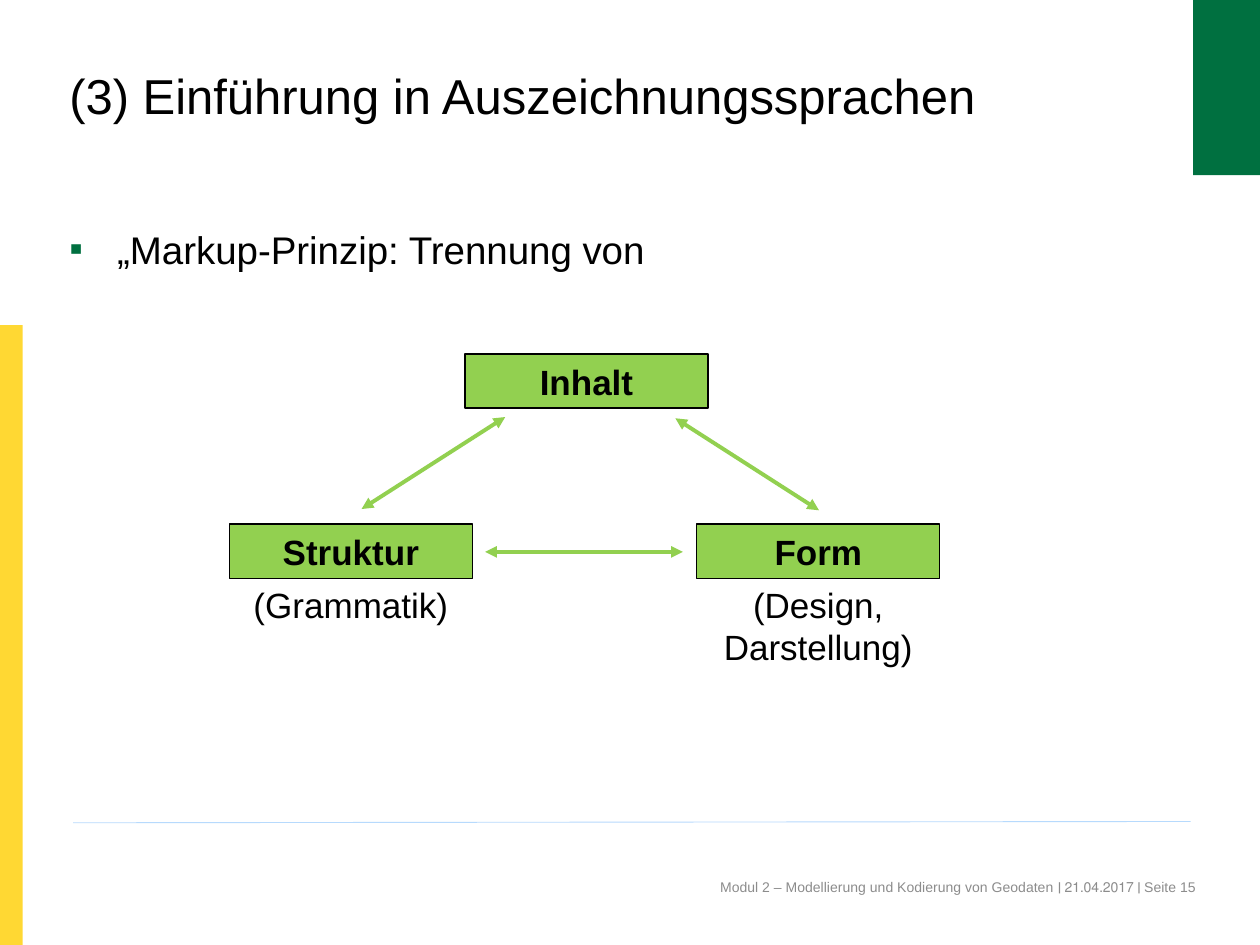
from dataclasses import dataclass

from lxml import etree
from pptx import Presentation
from pptx.dml.color import RGBColor
from pptx.enum.shapes import MSO_CONNECTOR, MSO_SHAPE
from pptx.enum.text import MSO_ANCHOR, PP_ALIGN
from pptx.oxml.ns import qn
from pptx.util import Inches, Pt

RECT = MSO_SHAPE.RECTANGLE
LINE = MSO_CONNECTOR.STRAIGHT
LEFT, MID, RIGHT = PP_ALIGN.LEFT, PP_ALIGN.CENTER, PP_ALIGN.RIGHT
TOP, CENTER = MSO_ANCHOR.TOP, MSO_ANCHOR.MIDDLE


@dataclass(frozen=True)
class Theme:
    """Colours, font and type sizes."""
    font: str = "Arial"
    ink: str = "000000"
    gray: str = "8C8C8C"
    green: str = "007040"
    lime: str = "92D050"
    gold: str = "FFD833"
    sky: str = "B7DAFD"
    title: int = 28
    body: int = 22
    node: int = 20
    foot: int = 8


THEME = Theme()
PAD = (0.08, 0.04, 0.08, 0.04)


def rgb(code):
    """Turn a hex code into a colour."""
    return RGBColor.from_string(code)


def write(shape, text, size, color=THEME.ink, bold=False, align=LEFT,
          anchor=TOP, pad=(0, 0, 0, 0), lead=None, bullet=None):
    """Put one formatted paragraph into a shape."""
    frame = shape.text_frame
    frame.word_wrap = True
    frame.vertical_anchor = anchor
    (frame.margin_left, frame.margin_top,
     frame.margin_right, frame.margin_bottom) = map(Inches, pad)
    para = frame.paragraphs[0]
    para.text = text
    para.alignment = align
    if lead:
        para.line_spacing = Pt(lead)
    if bullet:
        props = para._p.get_or_add_pPr()
        props.set("marL", str(Inches(0.38)))
        props.set("indent", str(-Inches(0.38)))
        tint = etree.SubElement(props, qn("a:buClr"))
        etree.SubElement(tint, qn("a:srgbClr"), val=bullet)
        etree.SubElement(props, qn("a:buFont"), typeface=THEME.font)
        etree.SubElement(props, qn("a:buChar"), char="▪")
    font = para.font
    font.name, font.size, font.bold = THEME.font, Pt(size), bold
    font.color.rgb = rgb(color)


def label(slide, box, text, size, **style):
    """Add a text box."""
    shape = slide.shapes.add_textbox(*map(Inches, box))
    write(shape, text, size, **style)


def block(slide, box, fill, edge=None):
    """Add a filled rectangle, outlined if an edge colour is given."""
    shape = slide.shapes.add_shape(RECT, *map(Inches, box))
    shape.shadow.inherit = False
    shape.fill.solid()
    shape.fill.fore_color.rgb = rgb(fill)
    if edge:
        shape.line.color.rgb = rgb(edge)
        shape.line.width = Pt(0.75)
    else:
        shape.line.fill.background()
    return shape


def stroke(slide, ends, color, width, heads=False):
    """Add a straight line, with arrowheads at both ends on request."""
    link = slide.shapes.add_connector(LINE, *map(Inches, ends))
    link.line.color.rgb = rgb(color)
    link.line.width = Pt(width)
    if heads:
        for tag in ("a:headEnd", "a:tailEnd"):
            etree.SubElement(link.line._ln, qn(tag), type="triangle")
    etree.SubElement(link._element.spPr, qn("a:effectLst"))


def frame(slide, box):
    """Draw the coloured edge blocks, the rule and the footer."""
    x, y, w, h = box
    block(slide, (x, y + 2.58, 0.18, h - 2.58), THEME.gold)
    block(slide, (x + w - 0.53, y, 0.53, 1.39), THEME.green)
    stroke(slide, (x + 0.58, y + 6.53, x + 9.45, y + 6.52), THEME.sky, 0.5)
    label(slide, (x + 5, y + 6.97, 4.49, 0.4),
          "Modul 2 – Modellierung und Kodierung von Geodaten "
          "׀ 21.04.2017 ׀ Seite 15",
          THEME.foot, color=THEME.gray, align=RIGHT, pad=(0, 0, 0, 0.05))


def heading(slide, box):
    """Place the slide title."""
    label(slide, box, "(3) Einführung in Auszeichnungssprachen",
          THEME.title, lead=33)


def body(slide, box):
    """Place the bullet line."""
    label(slide, box, "„Markup-Prinzip: Trennung von", THEME.body,
          bullet=THEME.green)


def diagram(slide, box):
    """Draw the triangle of content, structure and form."""
    x, y, w, h = box
    wide, high = 1.93, 0.43
    low = h - 2 * high
    nodes = [
        (0, low, "Struktur", "(Grammatik)"),
        (w - wide, low, "Form", "(Design, Darstellung)"),
        (1.87, 0, "Inhalt", None),
    ]
    for dx, dy, name, note in nodes:
        spot = (x + dx, y + dy, wide, high)
        write(block(slide, spot, THEME.lime, THEME.ink), name, THEME.node,
              bold=True, align=MID, anchor=CENTER, pad=PAD)
        if note:
            label(slide, (x + dx, y + dy + high, wide, high), note,
                  THEME.node, align=MID, pad=PAD)
    arrows = [
        (2.19, 0.5, 1.05, 1.23),
        (3.54, 0.51, 4.68, 1.24),
        (2.03, 1.57, 3.6, 1.57),
    ]
    for x1, y1, x2, y2 in arrows:
        stroke(slide, (x + x1, y + y1, x + x2, y + y2),
               THEME.lime, 2.25, heads=True)


def main():
    """Build and save the slide."""
    deck = Presentation()
    deck.slide_width, deck.slide_height = Inches(10), Inches(7.5)
    slide = deck.slides.add_slide(deck.slide_layouts[6])
    frame(slide, (0, 0, 10, 7.5))
    body(slide, (0.55, 1.79, 8.92, 4.63))
    heading(slide, (0.55, 0.53, 8.5, 1.01))
    diagram(slide, (1.82, 2.81, 5.64, 2.21))
    deck.save("out.pptx")


if __name__ == "__main__":
    main()
